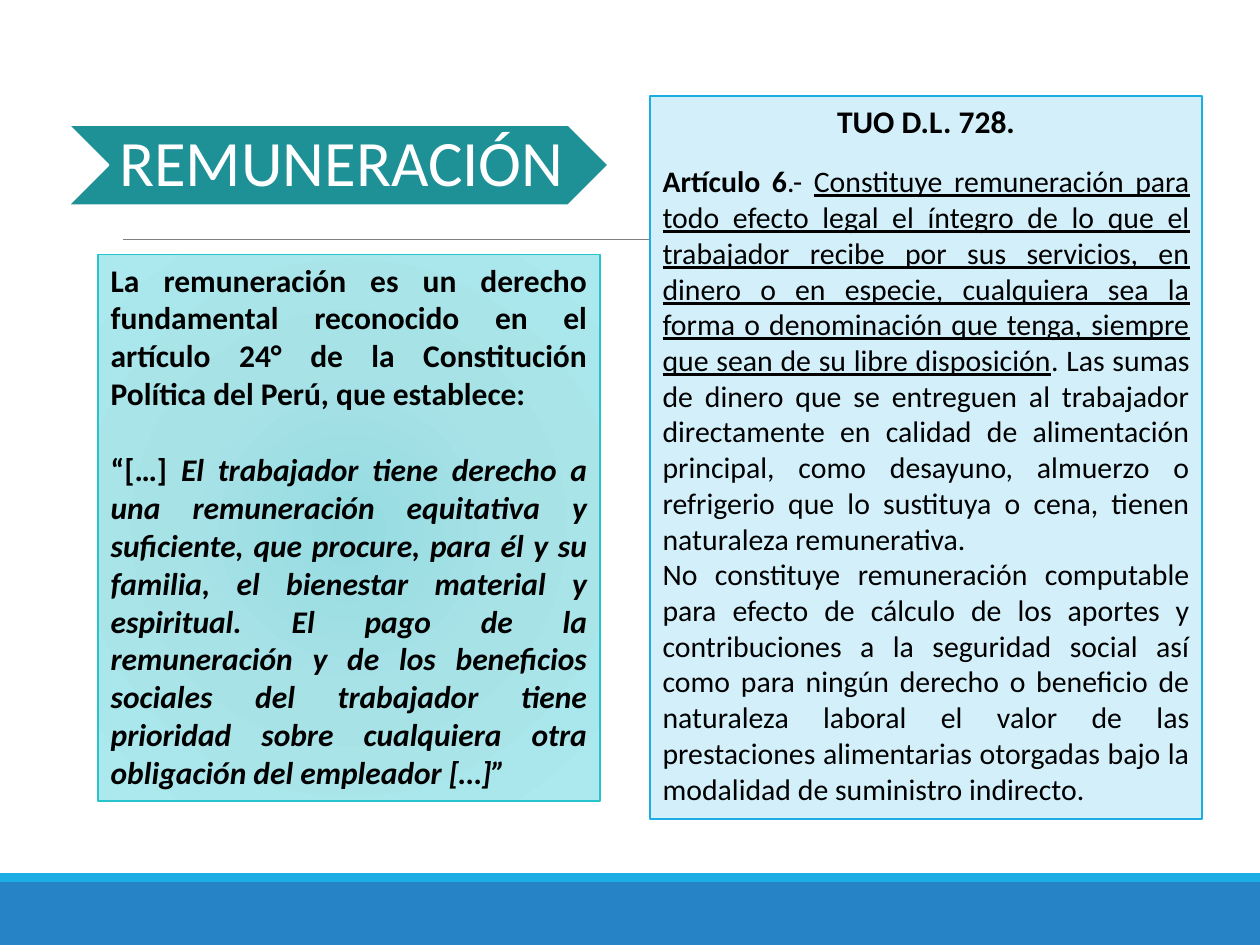
from dataclasses import dataclass

from lxml.etree import SubElement
from pptx import Presentation
from pptx.dml.color import RGBColor
from pptx.enum.shapes import MSO_CONNECTOR, MSO_SHAPE
from pptx.enum.text import MSO_ANCHOR, PP_ALIGN
from pptx.oxml import parse_xml
from pptx.oxml.ns import nsdecls, qn
from pptx.util import Inches, Pt


@dataclass(frozen=True)
class Theme:
    font: str = "Calibri"
    black: str = "000000"
    white: str = "FFFFFF"
    rule: str = "808080"
    footer: str = "2683C6"
    accent: str = "1CADE4"
    law_fill: str = "D2EFFA"
    chevron: str = "1E9197"
    quote_line: str = "28C4CC"
    quote_stops: tuple = ((0, "95DBE0"), (45, "A7E2E7"), (100, "ACE9EE"))
    title_size: float = 37
    heading_size: float = 18
    body_size: float = 17
    line_height: float = 1.22


THEME = Theme()
WIDTH, HEIGHT = 10, 7.5


def color(value):
    return RGBColor.from_string(value)


def add_block(page, box, fill=None, line=None, line_width=1, kind=MSO_SHAPE.RECTANGLE):
    shape = page.shapes.add_shape(kind, *map(Inches, box))
    shape.shadow.inherit = False
    if fill:
        shape.fill.solid()
        shape.fill.fore_color.rgb = color(fill)
    if line:
        shape.line.color.rgb = color(line)
        shape.line.width = Pt(line_width)
    else:
        shape.line.fill.background()
    return shape


def fill_radial(shape, stops):
    """Give the shape a circular gradient."""
    marks = "".join(
        f'<a:gs pos="{place * 1000}"><a:srgbClr val="{value}"/></a:gs>'
        for place, value in stops
    )
    gradient = parse_xml(
        f'<a:gradFill {nsdecls("a")} rotWithShape="1"><a:gsLst>{marks}</a:gsLst>'
        '<a:path path="circle"><a:fillToRect l="100000" t="100000" r="100000" b="100000"/>'
        "</a:path></a:gradFill>"
    )
    shape._element.spPr.find(qn("a:prstGeom")).addnext(gradient)


def add_span(para, text, size, ink=THEME.black, bold=False, italic=False, underline=False):
    span = para.add_run()
    span.text = text
    font = span.font
    font.name, font.size = THEME.font, Pt(size)
    font.color.rgb = color(ink)
    font.bold, font.italic, font.underline = bold, italic, underline


def start_text(shape, anchor=MSO_ANCHOR.TOP):
    frame = shape.text_frame
    frame.word_wrap = True
    frame.vertical_anchor = anchor
    return frame


def add_para(frame, first=False, align=PP_ALIGN.JUSTIFY, gap=0):
    """Start a paragraph; gap is the type size of the line left free above it."""
    para = frame.paragraphs[0] if first else frame.add_paragraph()
    para.alignment = align
    para.space_before = Pt(round(gap * THEME.line_height, 1))
    return para


def add_footer(page, box):
    left, top, width, height = box
    stripe = 0.07
    add_block(page, (left, top + stripe, width, height - stripe), THEME.footer)
    add_block(page, (left, top, width, stripe), THEME.accent)


def add_rule(page, left, right, top):
    rule = page.shapes.add_connector(
        MSO_CONNECTOR.STRAIGHT, Inches(left), Inches(top), Inches(right), Inches(top)
    )
    rule.line.color.rgb = color(THEME.rule)
    rule.line.width = Pt(0.5)
    SubElement(rule._element.spPr, qn("a:effectLst"))


def add_title(page, box):
    left, top, width, height = box
    add_block(page, box, THEME.chevron, THEME.white, 1.25, MSO_SHAPE.CHEVRON)
    # The label sits between the notch and the point
    label = page.shapes.add_textbox(
        *map(Inches, (left + height / 2, top, width - height, height))
    )
    frame = start_text(label, MSO_ANCHOR.MIDDLE)
    frame.margin_left, frame.margin_right = Inches(0.05), 0
    frame.margin_top = frame.margin_bottom = Inches(0.03)
    para = add_para(frame, first=True, align=PP_ALIGN.CENTER)
    para.line_spacing = 0.9
    add_span(para, "REMUNERACIÓN", THEME.title_size, THEME.white)


def add_quote(page, box):
    shape = add_block(page, box, line=THEME.quote_line)
    fill_radial(shape, THEME.quote_stops)
    frame = start_text(shape)
    size = THEME.heading_size
    para = add_para(frame, first=True)
    add_span(para, "La remuneración es un derecho fundamental reconocido en el artículo 24° "
             "de la Constitución Política del Perú, que establece: ", size, bold=True)
    para = add_para(frame, gap=size)
    add_span(para, "“[…] ", size, bold=True)
    add_span(para, "El trabajador tiene derecho a una remuneración equitativa y suficiente, "
             "que procure, para él y su familia, el bienestar material y espiritual. El pago "
             "de la remuneración y de los beneficios sociales del trabajador tiene prioridad "
             "sobre cualquiera otra obligación del empleador […]”", size, bold=True, italic=True)


def add_law(page, box):
    frame = start_text(add_block(page, box, THEME.law_fill, THEME.accent, 1.25))
    size = THEME.body_size
    para = add_para(frame, first=True, align=PP_ALIGN.CENTER)
    add_span(para, "TUO D.L. 728.", THEME.heading_size, bold=True)
    # Article and its definition
    para = add_para(frame, gap=11)
    add_span(para, "Artículo 6", size, bold=True)
    add_span(para, ".- ", size)
    add_span(para, "Constituye remuneración para todo efecto legal el íntegro de lo que el "
             "trabajador recibe por sus servicios, en dinero o en especie, cualquiera sea la "
             "forma o denominación que tenga, siempre que sean de su libre disposición",
             size, underline=True)
    add_span(para, ". Las sumas de dinero que se entreguen al trabajador directamente en "
             "calidad de alimentación principal, como desayuno, almuerzo o refrigerio que lo "
             "sustituya o cena, tienen naturaleza remunerativa. ", size)
    # Exception
    para = add_para(frame)
    add_span(para, "No constituye remuneración computable para efecto de cálculo de los "
             "aportes y contribuciones a la seguridad social así como para ningún derecho o "
             "beneficio de naturaleza laboral el valor de las prestaciones alimentarias "
             "otorgadas bajo la modalidad de suministro indirecto.", size)


def main():
    deck = Presentation()
    deck.slide_width, deck.slide_height = Inches(WIDTH), Inches(HEIGHT)
    page = deck.slides.add_slide(deck.slide_layouts[6])
    add_footer(page, (0, 6.93, WIDTH, HEIGHT - 6.93))
    add_rule(page, 0.98, 9.15, 1.9)
    add_quote(page, (0.78, 2.02, 3.98, 4.34))
    add_title(page, (0.54, 0.99, 4.29, 0.64))
    add_law(page, (5.16, 0.76, 4.38, 5.74))
    deck.save("out.pptx")


if __name__ == "__main__":
    main()
